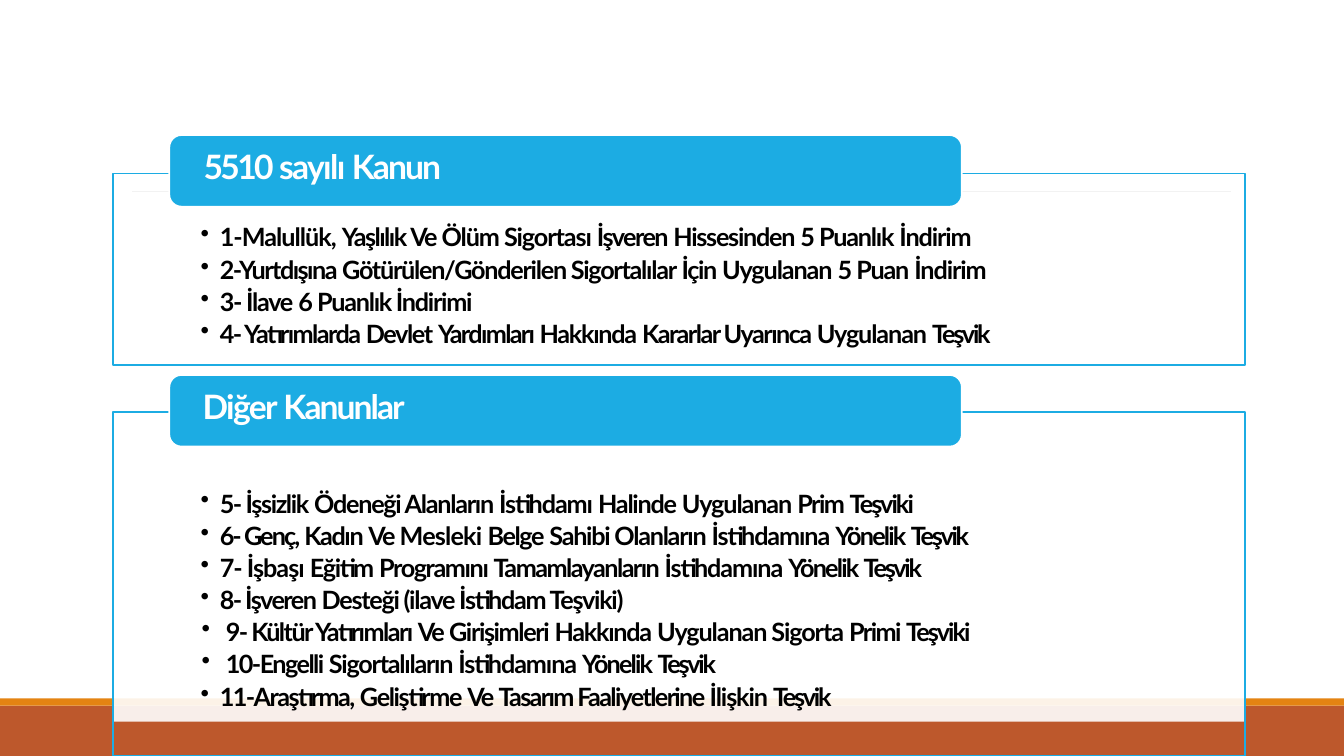
from lxml import etree
from pptx import Presentation
from pptx import util as u
from pptx.dml.color import RGBColor
from pptx.enum import shapes, text
from pptx.oxml.ns import qn

COLORS = {"white": "FFFFFF", "black": "000000", "blue": "1CACE3",
          "rust": "BD582C", "orange": "E48312", "gray": "808080"}

# Each item is a list of (words, letter spacing in points).
LAW = [
    [("1-Malullük, ", -0.7), ("Yaşlılık", -1.1), (" Ve ", -1.4),
     ("Ölüm Sigortası ", -0.8), ("İşveren ", -1.1), ("Hissesinden ", -0.9),
     ("5 ", -1.4), ("Puanlık ", -0.9), ("İndirim", -0.8)],
    [("2-Yurtdışına ", -1.1), ("Götürülen/Gönderilen Sigortalılar ", -0.9),
     ("İçin ", -1), ("Uygulanan ", -0.8), ("5 ", -1.4), ("Puan ", -0.9),
     ("İndirim", -0.8)],
    [("3- İlave ", -0.9), ("6 ", -1.4), ("Puanlık İndirimi", -0.9)],
    [("4- Yatırımlarda ", -1.1), ("Devlet ", -1), ("Yardımları ", -1.2),
     ("Hakkında ", -0.9), ("Kararlar Uyarınca ", -1.1),
     ("Uygulanan ", -0.8), ("Teşvik", -1.6)],
]
OTHER = [
    [("5- İşsizlik ", -1), ("Ödeneği Alanların ", -0.9),
     ("İstihdamı ", -0.8), ("Halinde ", -0.9), ("Uygulanan ", -0.8),
     ("Prim ", -1.1), ("Teşviki", -1.4)],
    [("6- Genç, ", -1.4), ("Kadın ", -1), ("Ve ", -1.4), ("Mesleki ", -0.6),
     ("Belge ", -1), ("Sahibi Olanların ", -0.9), ("İstihdamına ", -0.8),
     ("Yönelik ", -1.3), ("Teşvik", -1.6)],
    [("7- İşbaşı ", -0.7), ("Eğitim ", -0.9), ("Programını ", -1),
     ("Tamamlayanların ", -1.1), ("İstihdamına ", -0.8),
     ("Yönelik ", -1.3), ("Teşvik", -1.6)],
    [("8- İşveren ", -1.1), ("Desteği (ilave İstihdam Teşviki)", -0.9)],
    [("9- Kültür Yatırımları ", -1.1), ("Ve ", -1.4), ("Girişimleri ", -1),
     ("Hakkında ", -0.9), ("Uygulanan Sigorta ", -0.8), ("Primi ", -1.1),
     ("Teşviki", -1.4)],
    [("10-Engelli ", -1.1), ("Sigortalıların ", -0.9),
     ("İstihdamına ", -0.8), ("Yönelik ", -1.3), ("Teşvik", -1.6)],
    [("11-Araştırma, ", -1.1), ("Geliştirme ", -1), ("Ve ", -1.4),
     ("Tasarım Faaliyetlerine ", -1.2), ("İlişkin ", -0.8),
     ("Teşvik", -1.6)],
]
WIDE = ("9-", "10-")  # items with a deeper indent


class Deck:
    face = "Lato"

    def __init__(self):
        self.prs = Presentation()
        self.prs.slide_width = u.Inches(13.33)
        self.prs.slide_height = u.Inches(7.5)
        self.slide = self.prs.slides.add_slide(self.prs.slide_layouts[6])

    def color(self, name):
        return RGBColor.from_string(COLORS[name])

    def rect(self, box, fill=None, line=None, alpha=None, radius=None):
        """Draw a rectangle; alpha is opacity and radius a corner, in inches."""
        kind = shapes.MSO_SHAPE
        shape = self.slide.shapes.add_shape(
            kind.ROUNDED_RECTANGLE if radius else kind.RECTANGLE,
            *map(u.Inches, box))
        shape.shadow.inherit = False
        if radius:
            shape.adjustments[0] = radius / box[3]
        if fill:
            shape.fill.solid()
            shape.fill.fore_color.rgb = self.color(fill)
        else:
            shape.fill.background()
        if alpha:
            tone = shape._element.spPr.find(
                qn("a:solidFill") + "/" + qn("a:srgbClr"))
            etree.SubElement(tone, qn("a:alpha"), val=str(alpha * 1000))
        if line:
            shape.line.color.rgb = self.color(line)
            shape.line.width = u.Pt(1.2)
        else:
            shape.line.fill.background()

    def rule(self, left, right, y):
        line = self.slide.shapes.add_connector(
            shapes.MSO_CONNECTOR.STRAIGHT,
            *map(u.Inches, (left, y, right, y)))
        line.line.color.rgb = self.color("gray")
        line.line.width = u.Pt(0.5)
        etree.SubElement(line._element.spPr, qn("a:effectLst"))

    def frame(self, box, top):
        """Add a text box whose only inset is at the top."""
        frame = self.slide.shapes.add_textbox(
            *map(u.Inches, box)).text_frame
        frame.word_wrap = True
        frame.margin_left = frame.margin_right = frame.margin_bottom = 0
        frame.margin_top = u.Inches(top)
        frame.vertical_anchor = text.MSO_ANCHOR.TOP
        return frame

    def words(self, para, runs, size, color):
        font = para.font
        font.name, font.size, font.bold = self.face, u.Pt(size), True
        font.color.rgb = self.color(color)
        for part, gap in runs:
            run = para.add_run()
            run.text = part
            run._r.get_or_add_rPr().set("spc", str(round(gap * 100)))

    def head(self, y, left, runs):
        self.rect((1.68, y, 7.86, 0.71), "blue", "white", radius=0.12)
        para = self.frame((left, y + 0.1, 6, 0.43), 0.01).paragraphs[0]
        para.space_before = u.Pt(1)
        self.words(para, runs, 24, "white")

    def bullets(self, box, items):
        frame = self.frame(box, 0.04)
        for i, runs in enumerate(items):
            para = frame.add_paragraph() if i else frame.paragraphs[0]
            para.space_before = u.Pt(1.4 if i else 2.5)
            wide = runs[0][0].startswith(WIDE)
            props = para._p.get_or_add_pPr()
            props.set("marL", str(u.Inches(0.26 if wide else 0.2)))
            props.set("indent", str(u.Inches(-0.24 if wide else -0.19)))
            etree.SubElement(props, qn("a:buChar"), char="•")
            self.words(para, runs, 18, "black")


def main():
    deck = Deck()
    deck.rect((0, 7, 13.33, 0.5), "rust")
    deck.rect((0, 6.93, 13.33, 0.07), "orange")
    deck.rule(1.31, 12.21, 1.9)

    deck.rect((1.12, 1.72, 11.23, 1.9), "white", "blue", alpha=90)
    deck.head(1.34, 2.02, [("5510 ", -1.9), ("sayılı ", -1.2),
                           ("Kanun", -1.4)])
    deck.bullets((1.98, 2.16, 9.31, 1.29), LAW)

    deck.rect((1.12, 3.75, 11.23, 3.41), "white", alpha=90)
    deck.rect((1.12, 4.09, 11.23, 3.41), line="blue")
    deck.bullets((1.98, 4.8, 8.84, 2.27), OTHER)
    deck.head(3.72, 2.01, [("Diğer ", -1.2), ("Kanunlar", -1.4)])
    deck.prs.save("out.pptx")


if __name__ == "__main__":
    main()
